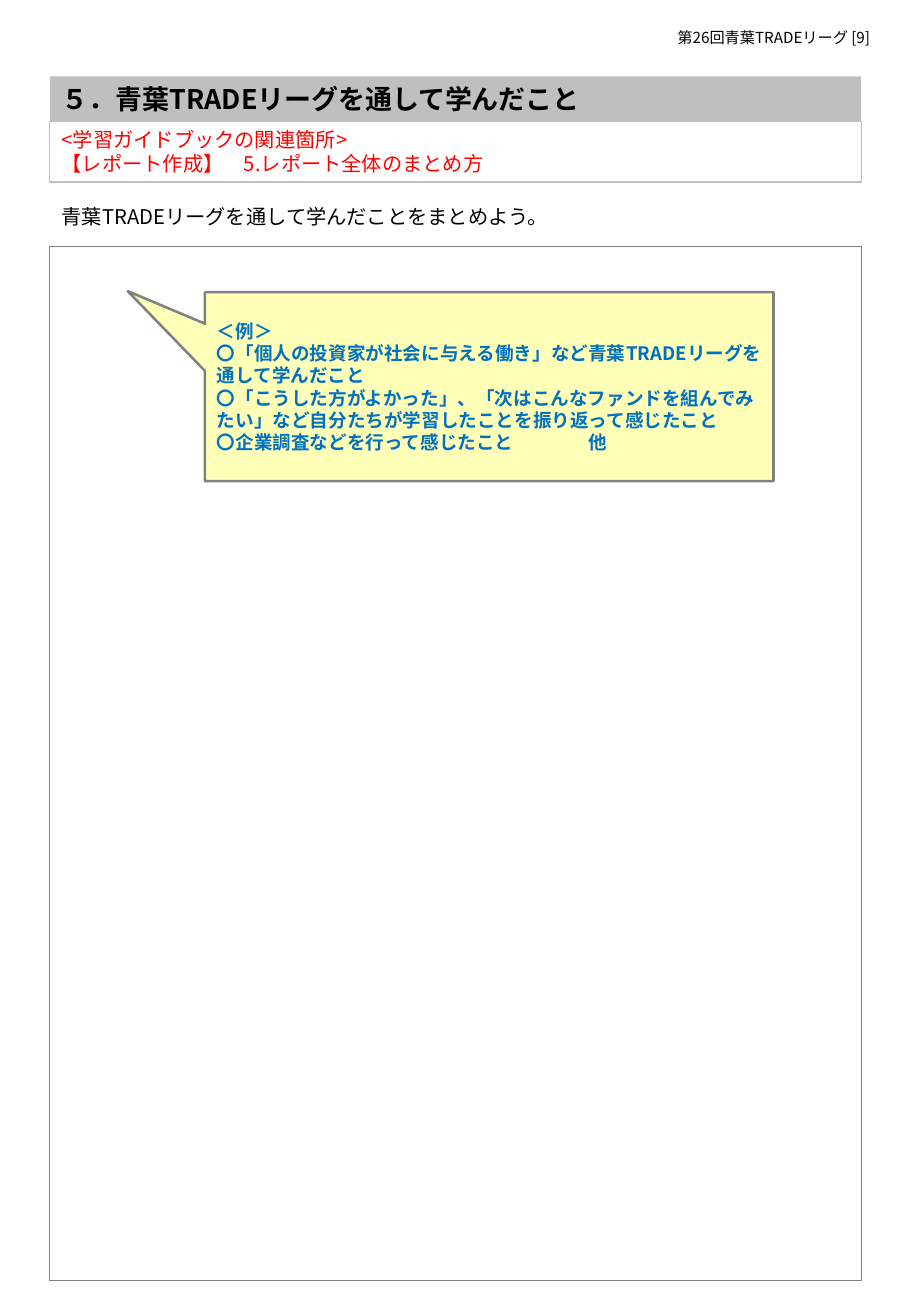
import pptx
import pptx.util
import pptx.dml.color
import pptx.enum.shapes
import pptx.enum.text
import pptx.oxml
import pptx.oxml.ns

Pt = pptx.util.Pt
Shapes = pptx.enum.shapes.MSO_SHAPE
Align = pptx.enum.text.PP_ALIGN
Anchor = pptx.enum.text.MSO_ANCHOR

FONT = "Noto Sans CJK JP"
LINE_HEIGHT = 1.2
COLOURS = {
    "text": "000000",
    "guide": "FF0000",
    "example": "0070C0",
    "band": "BFBFBF",
    "frame": "808080",
    "callout": "FFFFB7",
}
LEFT, WIDTH = 29.5, 481


def colour(name):
    return pptx.dml.color.RGBColor.from_string(COLOURS[name])


def write(shape, lines, size, ink, bold=False, align=Align.LEFT, anchor=Anchor.TOP):
    """Fill a shape with one paragraph for each line."""
    frame = shape.text_frame
    frame.text = "\n".join(lines)
    frame.word_wrap = True
    frame.auto_size = pptx.enum.text.MSO_AUTO_SIZE.NONE
    frame.vertical_anchor = anchor
    frame.margin_left = frame.margin_right = Pt(7.2)
    frame.margin_top = frame.margin_bottom = Pt(3.6)
    for para in frame.paragraphs:
        para.alignment = align
        para.line_spacing = Pt(size * LINE_HEIGHT)
        para.space_before = Pt(0)
        for span in para.runs:
            span.font.size = Pt(size)
            span.font.bold = bold
            span.font.name = FONT
            span.font.color.rgb = colour(ink)
            east_asian = pptx.oxml.parse_xml(
                f'<a:ea {pptx.oxml.ns.nsdecls("a")} typeface="{FONT}"/>')
            span.font._element.find(pptx.oxml.ns.qn("a:latin")).addnext(east_asian)


def add_box(page, kind, box, line, weight, fill=None):
    shape = page.shapes.add_shape(kind, *map(Pt, box))
    shape.shadow.inherit = False
    shape.line.color.rgb = colour(line)
    shape.line.width = Pt(weight)
    if fill:
        shape.fill.solid()
        shape.fill.fore_color.rgb = colour(fill)
    else:
        shape.fill.background()
    return shape


def add_text(page, box, text, size, align=Align.LEFT):
    write(page.shapes.add_textbox(*map(Pt, box)), [text], size, "text", align=align)


def add_heading(page, box):
    """Grey title band with the guidebook reference below it."""
    left, top, width, height = box
    band_height = 26.7
    title = page.shapes.title
    title.left, title.top, title.width, title.height = map(
        Pt, (left, top, width, band_height))
    title.fill.solid()
    title.fill.fore_color.rgb = colour("band")
    write(title, ["５．青葉TRADEリーグを通して学んだこと"], 16, "text", bold=True)

    guide = add_box(page, Shapes.RECTANGLE,
                    (left, top + band_height, width, height - band_height),
                    "band", 0.75)
    write(guide, ["<学習ガイドブックの関連箇所>",
                  "【レポート作成】　5.レポート全体のまとめ方"],
          12, "guide", align=Align.JUSTIFY)


def add_answer_area(page, box):
    """Framed writing space with an example callout."""
    left, top, width, height = box
    add_box(page, Shapes.RECTANGLE, box, "frame", 0.5)
    callout = add_box(page, Shapes.RECTANGULAR_CALLOUT,
                      (left + 92, top + 27, 337, 112), "frame", 1.5, "callout")
    callout.adjustments[0] = -0.636
    callout.adjustments[1] = -0.506
    write(callout, [
        "＜例＞",
        "〇「個人の投資家が社会に与える働き」など青葉TRADEリーグを通して学んだこと",
        "〇「こうした方がよかった」、「次はこんなファンドを組んでみたい」など"
        "自分たちが学習したことを振り返って感じたこと",
        "〇企業調査などを行って感じたこと\t他",
    ], 11, "example", bold=True, anchor=Anchor.MIDDLE)

    # Tab stop for the closing word
    properties = callout.text_frame.paragraphs[-1]._p.get_or_add_pPr()
    properties.append(pptx.oxml.parse_xml(
        f'<a:tabLst {pptx.oxml.ns.nsdecls("a")}>'
        f'<a:tab pos="{Pt(220)}" algn="l"/></a:tabLst>'))


def main():
    deck = pptx.Presentation()
    deck.slide_width, deck.slide_height = Pt(540), Pt(780)
    page = deck.slides.add_slide(deck.slide_layouts.get_by_name("Title Only"))

    # Running head
    add_text(page, (394.5, 13, 145.5, 18), "第26回青葉TRADEリーグ [9]", 9)
    add_heading(page, (LEFT, 45.3, WIDTH, 62.7))
    # Task
    add_text(page, (LEFT, 117.4, WIDTH, 21.6),
             "青葉TRADEリーグを通して学んだことをまとめよう。", 12, Align.JUSTIFY)
    add_answer_area(page, (LEFT, 146.2, WIDTH, 612.7))

    deck.save("out.pptx")


if __name__ == "__main__":
    main()
